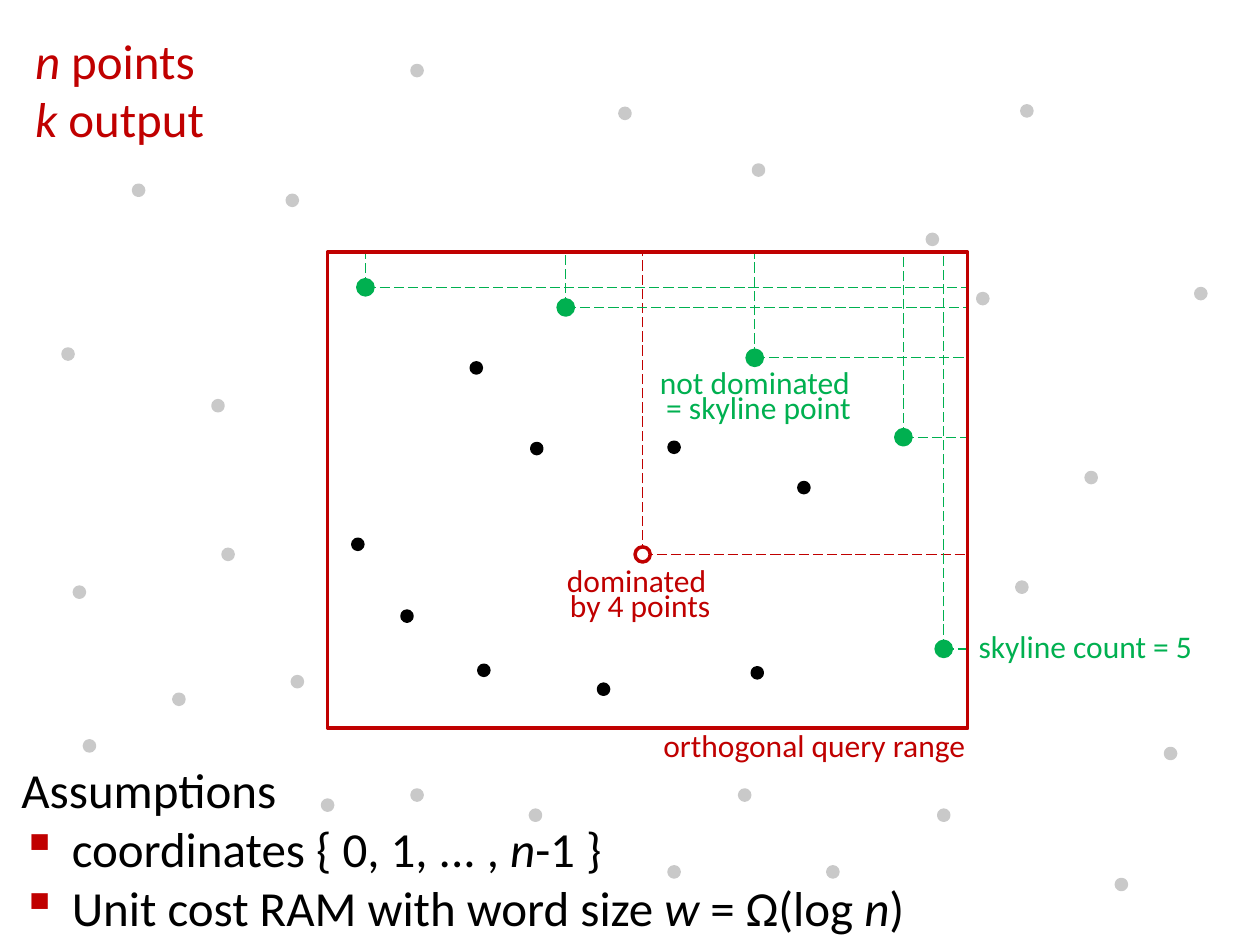
from collections import namedtuple
from dataclasses import dataclass

from lxml.etree import SubElement
from pptx import Presentation
from pptx.dml.color import RGBColor
from pptx.enum.dml import MSO_LINE
from pptx.enum.shapes import MSO_CONNECTOR, MSO_SHAPE
from pptx.enum.text import MSO_AUTO_SIZE, PP_ALIGN
from pptx.oxml.ns import qn
from pptx.util import Inches, Pt

Box = namedtuple("Box", "left top width height")


@dataclass(frozen=True)
class Theme:
    """Colours, font and sizes of the slide."""
    ink: RGBColor = RGBColor(0, 0, 0)
    paper: RGBColor = RGBColor(255, 255, 255)
    red: RGBColor = RGBColor(0xC0, 0, 0)
    green: RGBColor = RGBColor(0, 0xB0, 0x50)
    font: str = "Calibri"
    body: int = 28
    label: int = 18
    outline: float = 2
    guide: float = 0.75
    veil_alpha: int = 79


THEME = Theme()
POINT_SIZE = 0.08
MARKER_SIZE = 0.12

POINTS = [
    (3.78, 2.92), (2.90, 2.29), (4.79, 5.47), (4.26, 3.56), (2.84, 4.32), (2.60, 6.39),
    (5.35, 3.55), (4.49, 2.45), (5.10, 4.40), (5.98, 2.85), (7.17, 3.48), (7.48, 5.16),
    (2.36, 5.41), (6.38, 3.87), (7.80, 2.37), (8.11, 4.66), (6.02, 1.35), (3.31, 6.31),
    (1.73, 3.22), (0.71, 5.92), (5.35, 6.92), (7.40, 1.90), (8.15, 0.88), (5.91, 6.31),
    (3.31, 0.56), (1.10, 1.51), (4.25, 6.47), (7.49, 6.47), (8.90, 7.02), (9.53, 2.33),
    (6.61, 6.92), (8.66, 3.79), (9.29, 5.98), (0.63, 4.70), (4.96, 0.90), (0.54, 2.81),
    (2.32, 1.59), (1.81, 4.40), (6.01, 5.34), (3.23, 4.89), (1.42, 5.55), (3.84, 5.32),
]
VEILS = [
    Box(0.1, 0.03, 9.57, 1.94), Box(0.02, 5.83, 10, 1.69),
    Box(0, 1.97, 2.43, 3.85), Box(7.73, 2, 2.24, 3.83),
]
SKYLINE = [(0.3, 0.28), (1.89, 0.44), (3.39, 0.84), (4.57, 1.47), (4.89, 3.15)]
DOMINATED = (2.5, 2.4)


def inset(box, left, top, width, height):
    """Return a box placed relative to the corner of another."""
    return Box(box.left + left, box.top + top, width, height)


def draw_shape(slide, kind, box, fill=None, line=None):
    """Draw a flat preset shape."""
    shape = slide.shapes.add_shape(kind, *map(Inches, box))
    shape.shadow.inherit = False
    if fill is None:
        shape.fill.background()
    else:
        shape.fill.solid()
        shape.fill.fore_color.rgb = fill
    if line is None:
        shape.line.fill.background()
    else:
        shape.line.color.rgb = line
        shape.line.width = Pt(THEME.outline)
    return shape


def draw_dot(slide, x, y, size, fill, line):
    """Draw a round dot about its centre."""
    box = Box(x - size / 2, y - size / 2, size, size)
    draw_shape(slide, MSO_SHAPE.OVAL, box, fill, line)


def draw_guide(slide, start, end, color):
    """Draw a thin dashed guide line."""
    guide = slide.shapes.add_connector(
        MSO_CONNECTOR.STRAIGHT, *map(Inches, (*start, *end)))
    guide.line.color.rgb = color
    guide.line.width = Pt(THEME.guide)
    guide.line.dash_style = MSO_LINE.LONG_DASH
    SubElement(guide._element.spPr, qn("a:effectLst"))


def add_bullet(paragraph):
    """Give a paragraph a red square bullet with a hanging indent."""
    properties = paragraph._p.get_or_add_pPr()
    properties.set("marL", str(Inches(0.4)))
    properties.set("indent", str(-Inches(0.4)))
    color = SubElement(properties, qn("a:buClr"))
    SubElement(color, qn("a:srgbClr"), val=str(THEME.red))
    SubElement(properties, qn("a:buChar"), char="▪")


def write(slide, box, paragraphs, size=THEME.label, color=THEME.ink,
          align=PP_ALIGN.LEFT, leading=None, margin=None, bullets_from=None):
    """Write paragraphs, with asterisks around italic parts."""
    frame = slide.shapes.add_textbox(*map(Inches, box)).text_frame
    frame.word_wrap = True
    frame.auto_size = MSO_AUTO_SIZE.SHAPE_TO_FIT_TEXT
    if margin is not None:
        frame.margin_left = frame.margin_right = Inches(margin)
        frame.margin_top = frame.margin_bottom = Inches(margin)
    for number, text in enumerate(paragraphs):
        paragraph = frame.add_paragraph() if number else frame.paragraphs[0]
        paragraph.alignment = align
        if leading:
            paragraph.line_spacing = Pt(leading)
        if bullets_from is not None and number >= bullets_from:
            add_bullet(paragraph)
        for line_number, line in enumerate(text.split("\n")):
            if line_number:
                paragraph.add_line_break()
            for part_number, part in enumerate(line.split("*")):
                if part:
                    run = paragraph.add_run()
                    run.text = part
                    run.font.name = THEME.font
                    run.font.size = Pt(size)
                    run.font.color.rgb = color
                    run.font.italic = part_number % 2 == 1


def add_point_set(slide, box):
    """Scatter the points and fade those outside the query range."""
    for x, y in POINTS:
        draw_dot(slide, box.left + x, box.top + y, POINT_SIZE, THEME.ink, THEME.ink)
    for veil in VEILS:
        shape = draw_shape(slide, MSO_SHAPE.RECTANGLE, inset(box, *veil), THEME.paper)
        color = shape._element.spPr.find(qn("a:solidFill"))[0]
        SubElement(color, qn("a:alpha"), val=str(THEME.veil_alpha * 1000))


def add_dominance(slide, box, point, color, fill):
    """Mark a point and the corner region that dominates it."""
    x, y = box.left + point[0], box.top + point[1]
    draw_guide(slide, (x, y), (box.left + box.width, y), color)
    draw_guide(slide, (x, y), (x, box.top), color)
    draw_dot(slide, x, y, MARKER_SIZE, fill, color)


def add_query_range(slide, box):
    """Draw the query rectangle with its skyline and labels."""
    add_dominance(slide, box, DOMINATED, THEME.red, THEME.paper)
    for point in SKYLINE:
        add_dominance(slide, box, point, THEME.green, THEME.green)
    draw_shape(slide, MSO_SHAPE.RECTANGLE, box, line=THEME.red)
    write(slide, inset(box, 1.46, 3.71, 3.7, 0.4), ["orthogonal query range"],
          color=THEME.red, align=PP_ALIGN.RIGHT)
    write(slide, inset(box, 1.22, 2.51, 2.52, 0.51), ["dominated \nby 4 points"],
          color=THEME.red, align=PP_ALIGN.CENTER, leading=14)
    write(slide, inset(box, 4.98, 2.93, 1.98, 0.4), ["skyline count = 5"],
          color=THEME.green, align=PP_ALIGN.RIGHT)
    write(slide, inset(box, 2.16, 0.94, 2.52, 0.51),
          ["not dominated ", "= skyline point"],
          color=THEME.green, align=PP_ALIGN.CENTER, leading=14)


def add_parameters(slide, box):
    """Name the input and output sizes."""
    write(slide, box, ["*n* points", "*k* output"], size=THEME.body, color=THEME.red)


def add_assumptions(slide, box):
    """List the assumptions of the model."""
    write(slide, box,
          ["Assumptions", "coordinates { 0, 1, ... , *n*-1 }",
           "Unit cost RAM with word size *w *= Ω(log *n*)"],
          size=THEME.body, margin=0, bullets_from=1)


def main():
    """Build and save the slide."""
    deck = Presentation()
    deck.slide_width, deck.slide_height = Inches(10), Inches(7.5)
    slide = deck.slides.add_slide(deck.slide_layouts[6])
    add_point_set(slide, Box(0, 0, 10, 7.5))
    add_parameters(slide, Box(0.18, 0.19, 2.14, 1.04))
    add_query_range(slide, Box(2.6, 2, 5.08, 3.78))
    add_assumptions(slide, Box(0.17, 6.03, 10.02, 1.41))
    deck.save("out.pptx")


if __name__ == "__main__":
    main()
